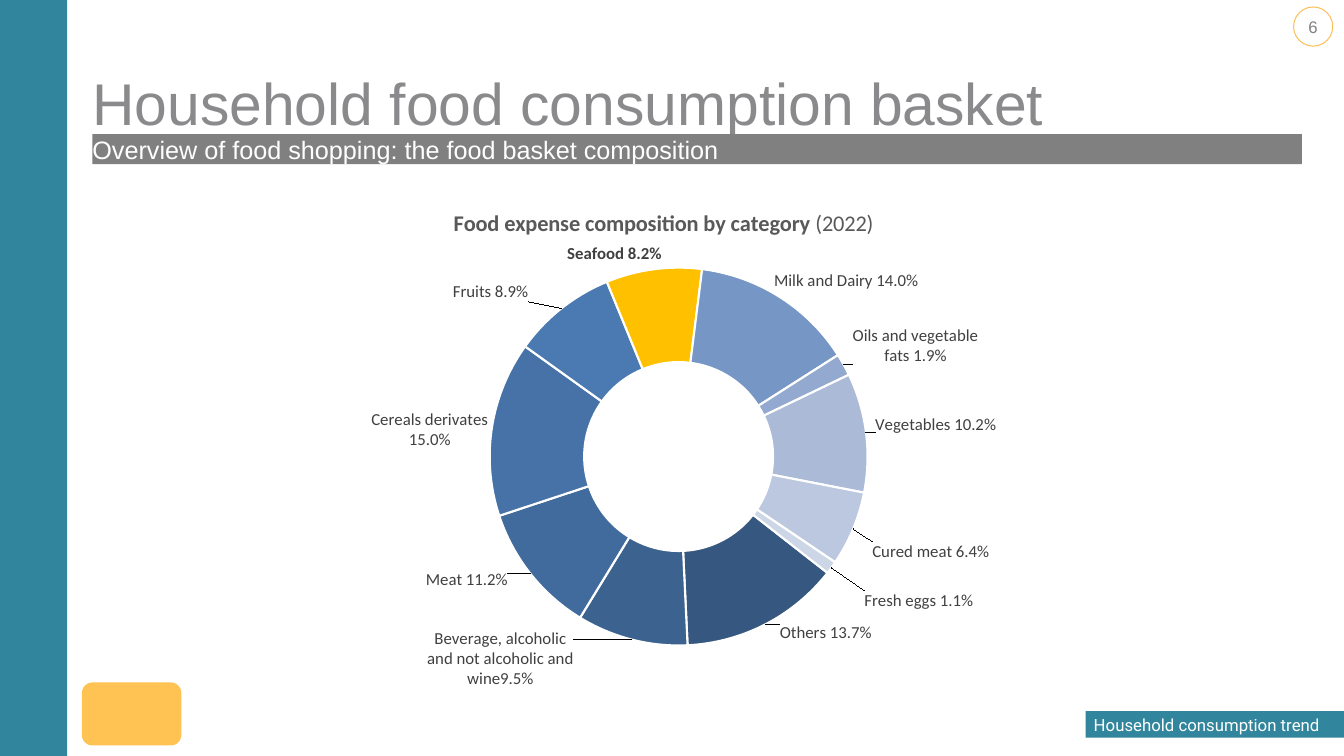
from math import cos, radians, sin

from pptx import Presentation
from pptx.chart.data import CategoryChartData
from pptx.dml.color import RGBColor
from pptx.enum.chart import XL_CHART_TYPE as ChartType
from pptx.enum.shapes import MSO_SHAPE as Preset
from pptx.enum.text import MSO_ANCHOR as Anchor, MSO_AUTO_SIZE as AutoSize, PP_ALIGN as Align
from pptx.oxml import parse_xml
from pptx.oxml.ns import nsdecls, qn
from pptx.util import Pt

TEAL, GREY, WHITE, AMBER = "31859C", "808080", "FFFFFF", "FEC352"
CHART_LEFT, CHART_TOP, CHART_WIDTH, CHART_HEIGHT = 234, 136, 480, 358.5
PLOT = {"x": 0.229, "y": 0.154, "w": 0.587, "h": 0.753}
START_ANGLE = 128
HOLE_SHARE = 0.5

# category, share, colour, label centre x, label centre y, label width
FOODS = [
    ("Others", 0.137, "365880", 590, 452, 80),
    ("Beverage", 0.095, "3C628F", 357.5, 470.5, 120),
    ("Meat", 0.112, "426B9D", 333.5, 414, 80),
    ("Cereals derivates", 0.15, "4672A8", 307, 307, 95),
    ("Fruits", 0.089, "4B7AB3", 350.5, 208.5, 80),
    ("Seafood", 0.082, "FFC000", 439, 181, 90),
    ("Milk and Dairy", 0.14, "7696C6", 604.5, 200.5, 120),
    ("Oils and vegetable fats", 0.019, "93A9CF", 654, 247, 105),
    ("Vegetables", 0.102, "AABAD7", 668.5, 303.5, 100),
    ("Cured meat", 0.064, "BCC8DF", 665, 394, 100),
    ("Fresh eggs", 0.011, "CDD6E6", 656.5, 429, 100),
]
CUSTOM_TEXT = {"Beverage": "Beverage, alcoholic and not alcoholic and wine9.5%"}
HIGHLIGHT = "Seafood"


def rgb(value):
    return RGBColor.from_string(value)


def style_font(font, size, colour, name, bold=False):
    font.size, font.name, font.bold = Pt(size), name, bold
    font.color.rgb = rgb(colour)


def place(item, left, top, width, height):
    item.left, item.top, item.width, item.height = Pt(left), Pt(top), Pt(width), Pt(height)


def write(frame, text, size, colour, name="Arial", align=Align.LEFT, anchor=Anchor.TOP, inset=0):
    frame.auto_size = AutoSize.NONE
    frame.vertical_anchor = anchor
    frame.margin_left = frame.margin_right = Pt(inset)
    frame.margin_top = frame.margin_bottom = Pt(0)
    paragraph = frame.paragraphs[0]
    paragraph.alignment = align
    paragraph.space_before = Pt(0)
    run = paragraph.add_run()
    run.text = text
    style_font(run.font, size, colour, name)
    return paragraph


def add_block(slide, preset, box, fill=None, line=None):
    block = slide.shapes.add_shape(preset, *map(Pt, box))
    block.shadow.inherit = False
    if fill:
        block.fill.solid()
        block.fill.fore_color.rgb = rgb(fill)
    else:
        block.fill.background()
    if line:
        block.line.color.rgb = rgb(line)
        block.line.width = Pt(0.7)
    else:
        block.line.fill.background()
    return block


def manual_layout(**parts):
    settings = "".join(f'<c:{key} val="{value}"/>' for key, value in parts.items())
    return parse_xml(f'<c:layout {nsdecls("c")}><c:manualLayout>{settings}</c:manualLayout></c:layout>')


def label_size(width):
    return parse_xml(
        f'<c:extLst {nsdecls("c")}><c:ext uri="{{CE6537A1-D6FC-4f65-9D91-7224C49458BB}}" '
        'xmlns:c15="http://schemas.microsoft.com/office/drawing/2012/chart"><c15:layout>'
        f'<c:manualLayout><c:w val="{width / CHART_WIDTH:.2f}"/><c:h val="0.12"/></c:manualLayout>'
        "</c15:layout></c:ext></c:extLst>")


def ring_middle(angle):
    centre_x = CHART_LEFT + CHART_WIDTH * (PLOT["x"] + PLOT["w"] / 2)
    centre_y = CHART_TOP + CHART_HEIGHT * (PLOT["y"] + PLOT["h"] / 2)
    radius = CHART_HEIGHT * PLOT["h"] / 2 * (1 + HOLE_SHARE) / 2
    return centre_x + radius * sin(radians(angle)), centre_y - radius * cos(radians(angle))


def add_label(point, food, angle):
    name, _, _, x, y, width = food
    middle_x, middle_y = ring_middle(angle)
    label = point.data_label
    bold = name == HIGHLIGHT
    if name in CUSTOM_TEXT:
        run = label.text_frame.paragraphs[0].add_run()
        run.text = CUSTOM_TEXT[name]
        style_font(run.font, 12, "404040", "Calibri")
    else:
        style_font(label.font, 12, "404040", "Calibri", bold)
    element = point._element.find(qn("c:dLbls")).findall(qn("c:dLbl"))[-1]
    element.find(qn("c:idx")).addnext(manual_layout(
        x=round((x - middle_x) / CHART_WIDTH, 4), y=round((y - middle_y) / CHART_HEIGHT, 4)))
    element.find(qn("c:showLegendKey")).addprevious(parse_xml(
        f'<c:numFmt {nsdecls("c")} formatCode="0.0%" sourceLinked="0"/>'))
    text_style = element.find(qn("c:txPr"))
    if text_style is not None:
        text_style.addprevious(element.find(qn("c:numFmt")))
    element.find(qn("c:showCatName")).set("val", "1")
    element.append(parse_xml(f'<c:separator {nsdecls("c")}> </c:separator>'))
    element.append(label_size(width))


def add_food_chart(slide):
    data = CategoryChartData(number_format="0.0%")
    data.categories = [food[0] for food in FOODS]
    data.add_series("Series 1", [food[1] for food in FOODS])
    box = map(Pt, (CHART_LEFT, CHART_TOP, CHART_WIDTH, CHART_HEIGHT))
    chart = slide.shapes.add_chart(ChartType.DOUGHNUT, *box, data).chart
    chart.has_legend = False
    style_font(chart.font, 10, "000000", "Calibri")
    heading = chart.chart_title.text_frame.paragraphs[0]
    for text, bold in (("Food expense composition by category", True), (" (2022)", False)):
        run = heading.add_run()
        run.text = text
        style_font(run.font, 16, "595959", "Calibri", bold)

    plot = chart.plots[0]
    plot.vary_by_categories = True
    ring = plot._element
    ring.find(qn("c:firstSliceAng")).set("val", str(START_ANGLE))
    ring.find(qn("c:holeSize")).set("val", str(int(HOLE_SHARE * 100)))
    area = ring.getparent()
    for old in area.findall(qn("c:layout")):
        area.remove(old)
    area.insert(0, manual_layout(layoutTarget="inner", xMode="edge", yMode="edge", **PLOT))

    series = plot.series[0]
    labels = series.data_labels
    labels.show_value = labels.show_category_name = True
    labels.number_format, labels.number_format_is_linked = "0.0%", False
    style_font(labels.font, 12, "404040", "Calibri")
    total = sum(food[1] for food in FOODS)
    angle = START_ANGLE
    for index, food in enumerate(FOODS):
        sweep = 360 * food[1] / total
        point = series.points[index]
        point.format.fill.solid()
        point.format.fill.fore_color.rgb = rgb(food[2])
        point.format.line.color.rgb = rgb(WHITE)
        point.format.line.width = Pt(1.5)
        add_label(point, food, angle + sweep / 2)
        angle += sweep


def main():
    deck = Presentation()
    deck.slide_width, deck.slide_height = Pt(960), Pt(540)
    slide = deck.slides.add_slide(deck.slide_layouts[1])
    title, subtitle = slide.placeholders

    add_block(slide, Preset.RECTANGLE, (0, 0, 48, 540), TEAL)
    add_block(slide, Preset.ROUNDED_RECTANGLE, (58.5, 487.5, 71, 45), AMBER)
    page = add_block(slide, Preset.OVAL, (924, 5, 28, 28), line="FDBE56")
    write(page.text_frame, "6", 12, GREY, align=Align.CENTER, anchor=Anchor.MIDDLE)

    place(title, 66, 46, 864, 52)
    write(title.text_frame, "Household food consumption basket", 42, "8A898C", anchor=Anchor.BOTTOM)

    section = add_block(slide, Preset.RECTANGLE, (775.5, 508, 184.5, 19), TEAL)
    write(section.text_frame, "Household consumption trend", 12, WHITE, "Roboto",
          anchor=Anchor.MIDDLE, inset=5.75)
    section.text_frame.word_wrap = False

    place(subtitle, 66, 95.75, 864, 21.5)
    subtitle.fill.solid()
    subtitle.fill.fore_color.rgb = rgb(GREY)
    overview = write(subtitle.text_frame, "Overview of food shopping: the food basket composition", 18, WHITE)
    properties = overview._p.get_or_add_pPr()
    properties.set("marL", "0")
    properties.set("indent", "0")
    properties.append(parse_xml(f'<a:buNone {nsdecls("a")}/>'))

    add_food_chart(slide)
    deck.save("out.pptx")


if __name__ == "__main__":
    main()
